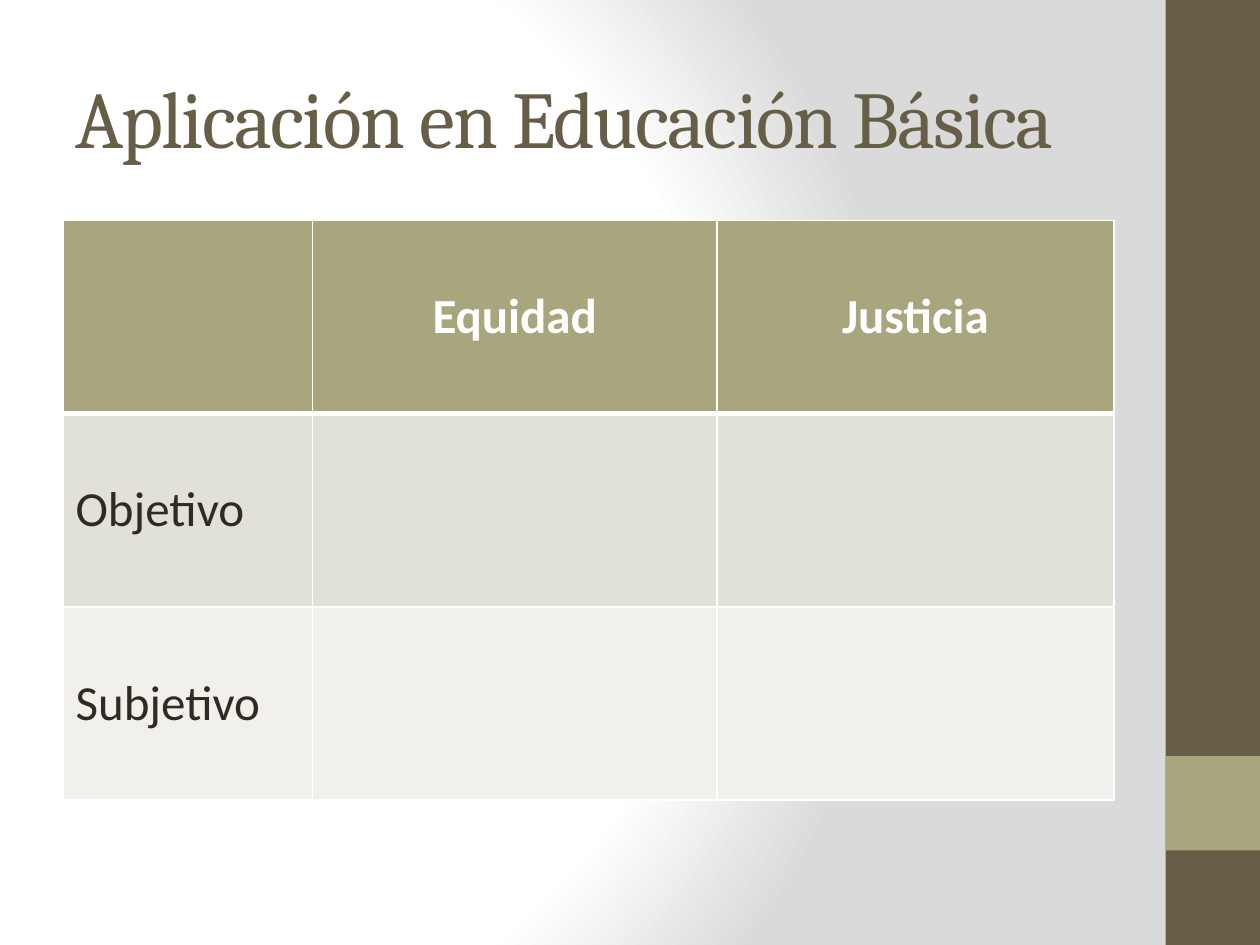
from lxml import etree
from pptx import Presentation
from pptx import util as u
from pptx.dml.color import RGBColor
from pptx.enum import shapes, text
from pptx.oxml import parse_xml
from pptx.oxml.ns import nsdecls, qn

BROWN = RGBColor(0x67, 0x5E, 0x47)
OLIVE = RGBColor(0xA9, 0xA5, 0x7C)
DARK = RGBColor(0x2F, 0x2B, 0x20)
WHITE = RGBColor(0xFF, 0xFF, 0xFF)
GREY = RGBColor(0xDA, 0xDA, 0xDA)
BAND = RGBColor(0xE2, 0xE1, 0xD7)
PALE = RGBColor(0xF1, 0xF0, 0xEC)

TITLE = {"name": "Cambria", "size": u.Pt(46), "bold": False}
HEADER = {"name": "Calibri", "size": u.Pt(28), "bold": True}
BODY = {**HEADER, "bold": False}

ROWS = [("", "Equidad", "Justicia"), ("Objetivo", "", ""), ("Subjetivo", "", "")]
COL_WIDTHS = (1.98, 3.21, 3.15)


def write(p, wording, font, color):
    """Add a run with the given font values and return it."""
    r = p.add_run()
    r.text = wording
    for name, value in font.items():
        setattr(r.font, name, value)
    r.font.color.rgb = color
    return r


def paint_background(s):
    """Fill the slide with a radial gradient from white to grey."""
    s.background.fill.gradient()
    grad = s.element.find(".//" + qn("a:gradFill"))
    stops = "".join(
        f'<a:gs pos="{pos}"><a:srgbClr val="{color}"/></a:gs>'
        for pos, color in ((0, WHITE), (75000, WHITE), (100000, GREY))
    )
    grad.getparent().replace(grad, parse_xml(
        f'<a:gradFill {nsdecls("a")} rotWithShape="1"><a:gsLst>{stops}</a:gsLst>'
        '<a:path path="circle"><a:fillToRect l="20000" t="50000" r="100000" b="50000"/>'
        "</a:path></a:gradFill>"
    ))


def add_sidebar(s, left, top, width, height):
    """Draw the side strip with its square accent."""
    for y, h, color in ((top, height, BROWN), (top + 6, width, OLIVE)):
        box = (u.Inches(v) for v in (left, y, width, h))
        sp = s.shapes.add_shape(shapes.MSO_SHAPE.RECTANGLE, *box)
        sp.shadow.inherit = False
        sp.fill.solid()
        sp.fill.fore_color.rgb = color
        sp.line.fill.background()


def add_title(s, left, top, width, height):
    """Place the slide title."""
    box = (u.Inches(v) for v in (left, top, width, height))
    tf = s.shapes.add_textbox(*box).text_frame
    tf.word_wrap = True
    tf.vertical_anchor = text.MSO_ANCHOR.MIDDLE
    r = write(tf.paragraphs[0], "Aplicación en Educación Básica", TITLE, BROWN)
    r.font._element.set("spc", "-100")


def set_borders(cell, widths):
    """Draw white cell borders, given a width in points per side."""
    tc_pr = cell._tc.get_or_add_tcPr()
    for i, (side, width) in enumerate(widths.items()):
        ln = etree.Element(qn(f"a:ln{side}"), w=str(u.Pt(width)))
        fill = etree.SubElement(ln, qn("a:solidFill"))
        etree.SubElement(fill, qn("a:srgbClr"), val=str(WHITE))
        tc_pr.insert(i, ln)


def add_matrix(s, left, top, width, height):
    """Build the table of equity and justice."""
    box = (u.Inches(v) for v in (left, top, width, height))
    table = s.shapes.add_table(len(ROWS), len(COL_WIDTHS), *box).table
    for column, col_width in zip(table.columns, COL_WIDTHS):
        column.width = u.Inches(col_width)
    for i, (row, fill) in enumerate(zip(ROWS, (OLIVE, BAND, PALE))):
        header = i == 0
        for j, wording in enumerate(row):
            cell = table.cell(i, j)
            cell.fill.solid()
            cell.fill.fore_color.rgb = fill
            cell.vertical_anchor = text.MSO_ANCHOR.MIDDLE
            set_borders(cell, {"L": 1, "R": 1, "T": 3 if i == 1 else 1, "B": 3 if header else 1})
            if wording:
                p = cell.text_frame.paragraphs[0]
                p.alignment = text.PP_ALIGN.CENTER if header else text.PP_ALIGN.LEFT
                write(p, wording, HEADER if header else BODY, WHITE if header else DARK)


def main():
    """Build and save the slide."""
    prs = Presentation()
    prs.slide_width, prs.slide_height = u.Inches(10), u.Inches(7.5)
    s = prs.slides.add_slide(prs.slide_layouts[6])
    paint_background(s)
    add_sidebar(s, 9.25, 0, 0.75, 7.5)
    add_title(s, 0.5, 0.3, 8.33, 1.25)
    add_matrix(s, 0.5, 1.75, 8.33, 4.6)
    prs.save("out.pptx")


if __name__ == "__main__":
    main()
